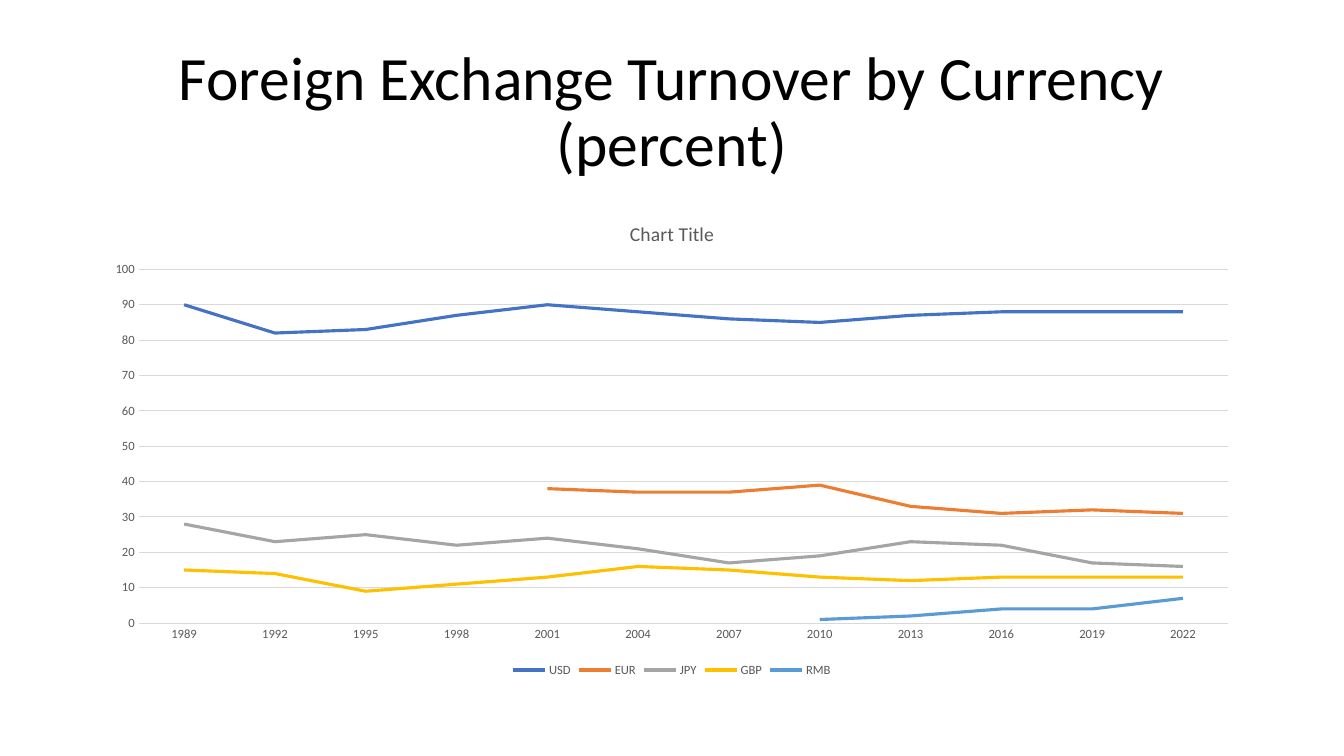
from pptx import Presentation
from pptx.chart.data import CategoryChartData
from pptx.dml.color import RGBColor
from pptx.enum.chart import XL_CHART_TYPE as ChartType, XL_LEGEND_POSITION as LegendPos
from pptx.enum.chart import XL_MARKER_STYLE as Marker, XL_TICK_MARK as Tick
from pptx.enum.text import MSO_ANCHOR as Anchor, PP_ALIGN as Align
from pptx.util import Pt

FONT, GREY, GRID = "Calibri", "595959", "D9D9D9"


def rgb(value):
    return RGBColor.from_string(value)


def style_font(font, size, color):
    font.name, font.size, font.bold = FONT, Pt(size), False
    font.color.rgb = rgb(color)


prs = Presentation()
prs.slide_width, prs.slide_height = Pt(960), Pt(540)
slide = prs.slides.add_slide(prs.slide_layouts[5])

# Title
heading = slide.shapes.title
heading.left, heading.top, heading.width, heading.height = Pt(66), Pt(28.8), Pt(828), Pt(104.4)
heading.text_frame.text = "Foreign Exchange Turnover by Currency\v(percent)"
heading.text_frame.word_wrap = True
heading.text_frame.vertical_anchor = Anchor.MIDDLE
line = heading.text_frame.paragraphs[0]
line.alignment, line.line_spacing = Align.CENTER, 0.9
for run in line.runs:
    style_font(run.font, 44, "000000")

# Turnover shares, one survey every three years
years = range(1989, 2023, 3)
currencies = [
    ("USD", "4472C4", [90, 82, 83, 87, 90, 88, 86, 85, 87, 88, 88, 88]),
    ("EUR", "ED7D31", [None] * 4 + [38, 37, 37, 39, 33, 31, 32, 31]),
    ("JPY", "A5A5A5", [28, 23, 25, 22, 24, 21, 17, 19, 23, 22, 17, 16]),
    ("GBP", "FFC000", [15, 14, 9, 11, 13, 16, 15, 13, 12, 13, 13, 13]),
    ("RMB", "5B9BD5", [None] * 7 + [1, 2, 4, 4, 7]),
]
turnover = CategoryChartData()
turnover.categories = [str(year) for year in years]
for name, _, shares in currencies:
    turnover.add_series(name, shares)

# Line chart
chart = slide.shapes.add_chart(
    ChartType.LINE, Pt(66), Pt(144), Pt(828), Pt(342.7), turnover).chart
style_font(chart.font, 10, "000000")
chart.has_title = True
chart.chart_title.text_frame.text = "Chart Title"
style_font(chart.chart_title.text_frame.paragraphs[0].runs[0].font, 14, GREY)
chart.chart_title.include_in_layout = False

for series, (_, color, _) in zip(chart.plots[0].series, currencies):
    series.smooth = False
    series.marker.style = Marker.NONE
    series.format.line.color.rgb = rgb(color)
    series.format.line.width = Pt(2.25)

# Axes and gridlines
year_axis, share_axis = chart.category_axis, chart.value_axis
for axis in (year_axis, share_axis):
    axis.major_tick_mark = axis.minor_tick_mark = Tick.NONE
    style_font(axis.tick_labels.font, 9, GREY)
share_axis.minimum_scale, share_axis.maximum_scale, share_axis.major_unit = 0, 100, 10
share_axis.has_major_gridlines = True
share_axis.format.line.fill.background()
for rule in (year_axis.format.line, share_axis.major_gridlines.format.line):
    rule.color.rgb = rgb(GRID)
    rule.width = Pt(0.75)

# Legend
chart.has_legend = True
chart.legend.position = LegendPos.BOTTOM
chart.legend.include_in_layout = False
style_font(chart.legend.font, 9, GREY)

prs.save("out.pptx")
